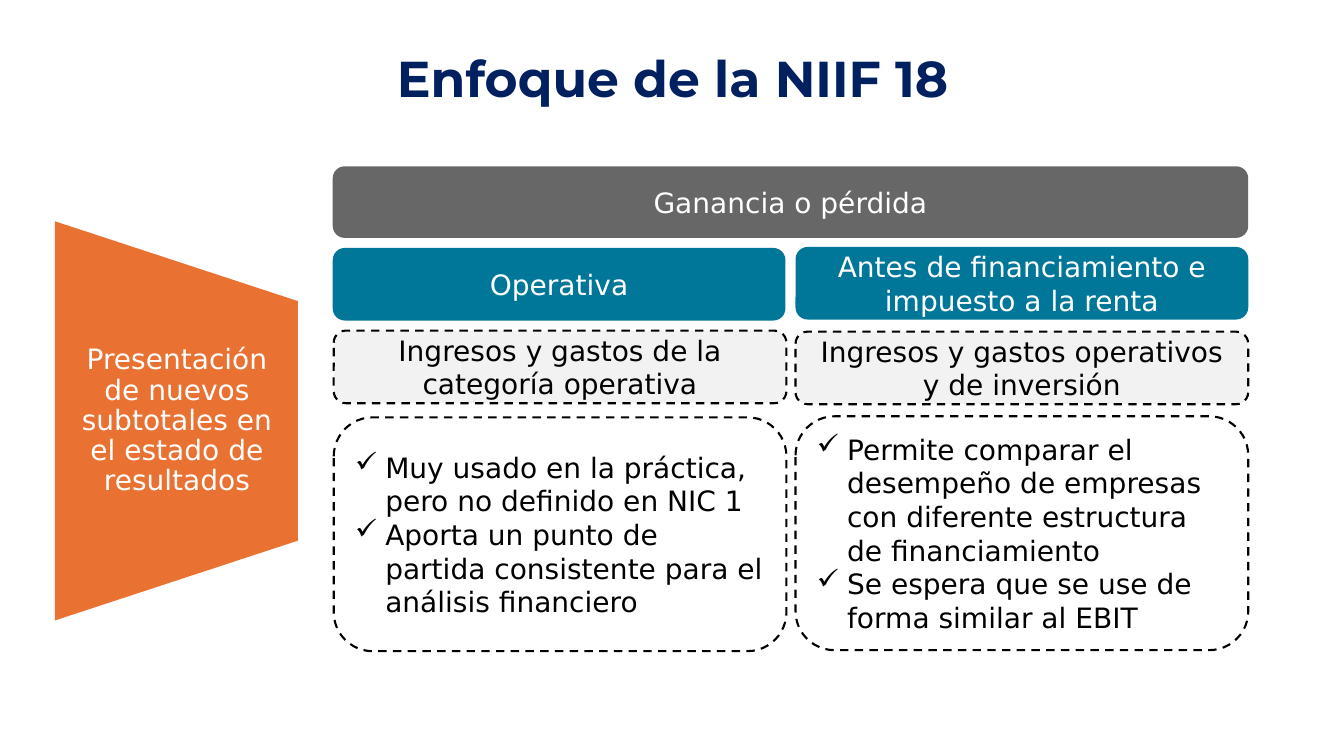
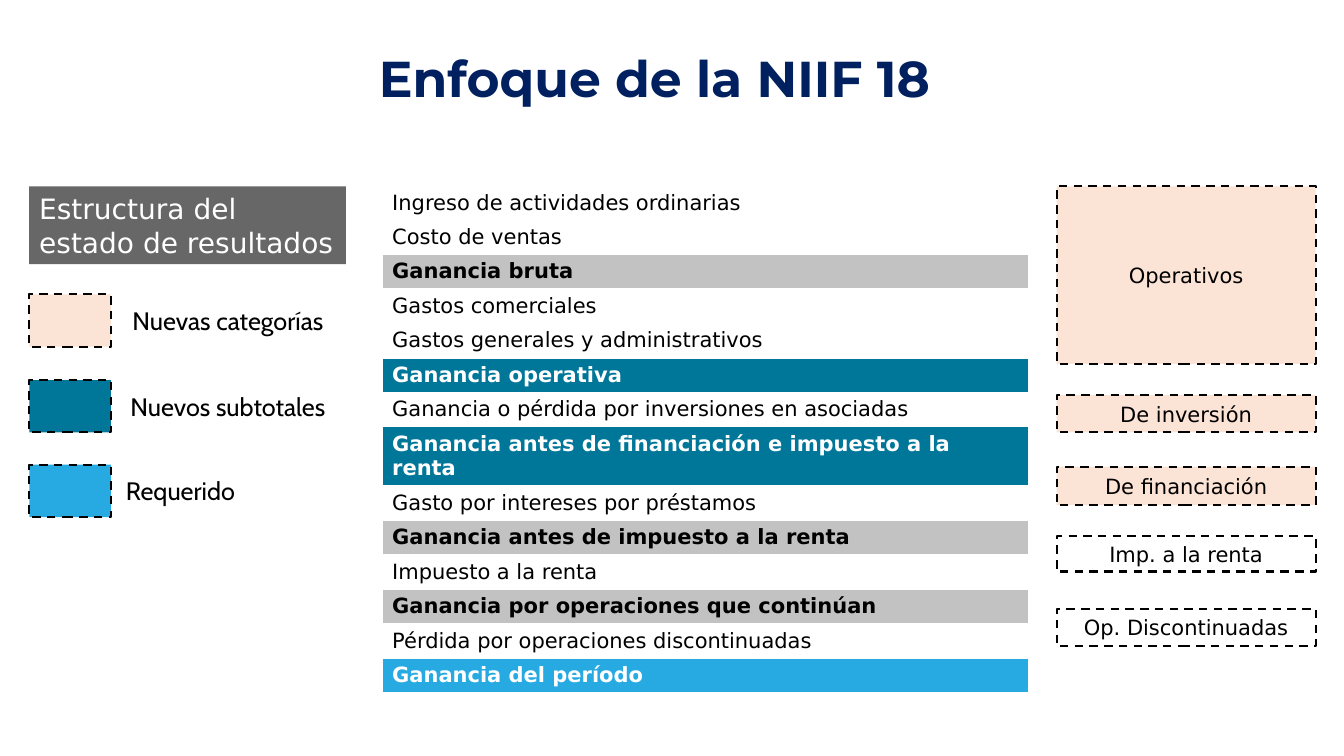
from lxml import etree
from pptx import Presentation
from pptx.dml.color import RGBColor
from pptx.enum import dml, shapes, text
from pptx.oxml import ns
from pptx.util import Inches, Pt

color = RGBColor.from_string
NAVY, TEAL, SKY, ORANGE = "002060", "007799", "27AAE2", "E97132"
GRAY, SILVER, PALE, PEACH = "676767", "C2C2C2", "F2F2F2", "FBE3D6"
BLACK, WHITE = "000000", "FFFFFF"
BODY_FONT, LEGEND_FONT, TITLE_FONT = "DejaVu Sans", "Cabin", "Montserrat"
RECT, ROUND = shapes.MSO_SHAPE.RECTANGLE, shapes.MSO_SHAPE.ROUNDED_RECTANGLE
LEFT, CENTER = text.PP_ALIGN.LEFT, text.PP_ALIGN.CENTER
MIDDLE = text.MSO_ANCHOR.MIDDLE


def write(frame, lines, size, ink=BLACK, font=BODY_FONT, align=CENTER,
          bold=False, spacing=None, check=False):
    """Fill a text frame, one paragraph per line, with check marks if asked."""
    frame.word_wrap = True
    for number, line in enumerate(lines):
        paragraph = frame.add_paragraph() if number else frame.paragraphs[0]
        paragraph.alignment = align
        if spacing:
            paragraph.line_spacing = spacing
        if check:
            properties = paragraph._p.get_or_add_pPr()
            properties.set("marL", str(Inches(0.3)))
            properties.set("indent", str(Inches(-0.3)))
            etree.SubElement(properties, ns.qn("a:buChar")).set("char", "✓")
        run = paragraph.add_run()
        run.text = line
        run.font.name, run.font.size, run.font.bold = font, Pt(size), bold
        run.font.color.rgb = color(ink)


def add_box(slide, place, fill=None, kind=RECT, dashed=False):
    box = slide.shapes.add_shape(kind, *map(Inches, place))
    box.shadow.inherit = False
    if fill:
        box.fill.solid()
        box.fill.fore_color.rgb = color(fill)
    else:
        box.fill.background()
    if dashed:
        box.line.color.rgb = color(BLACK)
        box.line.width = Pt(1.5)
        box.line.dash_style = dml.MSO_LINE.DASH
    else:
        box.line.fill.background()
    box.text_frame.vertical_anchor = MIDDLE
    return box


deck = Presentation()
deck.slide_width, deck.slide_height = Inches(13.33), Inches(7.5)

# Both slides carry the same title
slides = []
for title_left in (0.53, 0.35):
    slide = deck.slides.add_slide(deck.slide_layouts[5])
    title = slide.shapes.title
    title.left, title.top = Inches(title_left), Inches(0.08)
    title.width, title.height = Inches(12.28), Inches(1.45)
    title.text_frame.auto_size = text.MSO_AUTO_SIZE.NONE
    title.text_frame.vertical_anchor = MIDDLE
    write(title.text_frame, ["Enfoque de la NIIF 18"], 36, NAVY, TITLE_FONT,
          bold=True, spacing=0.9)
    slides.append(slide)
subtotals, statement = slides

# Slide 1: new subtotals
funnel = add_box(subtotals, (-0.23, 2.97, 3.96, 2.41), ORANGE,
                 shapes.MSO_SHAPE.FLOWCHART_MANUAL_OPERATION)
funnel.rotation = 270
topic = subtotals.shapes.add_textbox(*map(Inches, (0.55, 2.99, 2.41, 2.38))).text_frame
topic.vertical_anchor = MIDDLE
topic.margin_left = topic.margin_right = Inches(0.14)
topic.margin_top = topic.margin_bottom = 0
write(topic, ["Presentación de nuevos subtotales en el estado de resultados"],
      20, WHITE, spacing=0.9)

result = add_box(subtotals, (3.3, 1.65, 9.08, 0.71), GRAY, ROUND)
write(result.text_frame, ["Ganancia o pérdida"], 20, WHITE)

COLUMN_WIDTH = 4.49
columns = [
    (3.3, 3.31, (2.46, 3.28, 4.14), "Operativa",
     "Ingresos y gastos de la categoría operativa",
     ["Muy usado en la práctica, pero no definido en NIC 1",
      "Aporta un punto de partida consistente para el análisis financiero"]),
    (7.89, 7.89, (2.45, 3.29, 4.13), "Antes de financiamiento e impuesto a la renta",
     "Ingresos y gastos operativos y de inversión",
     ["Permite comparar el desempeño de empresas con diferente estructura de financiamiento",
      "Se espera que se use de forma similar al EBIT"]),
]
for head_left, left, tops, subtotal, content, reasons in columns:
    head_top, content_top, reasons_top = tops
    head = add_box(subtotals, (head_left, head_top, COLUMN_WIDTH, 0.72), TEAL, ROUND)
    write(head.text_frame, [subtotal], 20, WHITE)
    scope = add_box(subtotals, (left, content_top, COLUMN_WIDTH, 0.72), PALE, ROUND, True)
    write(scope.text_frame, [content], 20)
    benefits = add_box(subtotals, (left, reasons_top, COLUMN_WIDTH, 2.32), None, ROUND, True)
    write(benefits.text_frame, reasons, 20, align=LEFT, check=True)

# Slide 2: structure of the income statement
entries = [
    ("Ingreso de actividades ordinarias", None),
    ("Costo de ventas", None),
    ("Ganancia bruta", SILVER),
    ("Gastos comerciales", None),
    ("Gastos generales y administrativos", None),
    ("Ganancia operativa", TEAL),
    ("Ganancia o pérdida por inversiones en asociadas", None),
    ("Ganancia antes de financiación e impuesto a la renta", TEAL),
    ("Gasto por intereses por préstamos", None),
    ("Ganancia antes de impuesto a la renta", SILVER),
    ("Impuesto a la renta", None),
    ("Ganancia por operaciones que continúan", SILVER),
    ("Pérdida por operaciones discontinuadas", None),
    ("Ganancia del período", SKY),
]
ROW_HEIGHT = 0.32
income = statement.shapes.add_table(
    len(entries), 1, Inches(3.79), Inches(1.84), Inches(6.41),
    Inches(ROW_HEIGHT * len(entries))).table
income.first_row = income.horz_banding = False
for row, (entry, fill) in enumerate(entries):
    income.rows[row].height = Inches(ROW_HEIGHT)
    cell = income.cell(row, 0)
    for side in ("lnL", "lnR", "lnT", "lnB"):
        border = etree.SubElement(cell._tc.get_or_add_tcPr(), ns.qn(f"a:{side}"), w=str(Pt(1)))
        solid = etree.SubElement(border, ns.qn("a:solidFill"))
        etree.SubElement(solid, ns.qn("a:srgbClr"), val=WHITE)
    if fill:
        cell.fill.solid()
        cell.fill.fore_color.rgb = color(fill)
    else:
        cell.fill.background()
    write(cell.text_frame, [entry], 15, WHITE if fill in (TEAL, SKY) else BLACK,
          align=LEFT, bold=bool(fill))

categories = [
    ("Operativos", 1.85, 1.76, PEACH),
    ("De inversión", 3.92, 0.37, PEACH),
    ("De financiación", 4.63, 0.38, PEACH),
    ("Imp. a la renta", 5.32, 0.35, None),
    ("Op. Discontinuadas", 6.04, 0.37, None),
]
for category, top, height, fill in categories:
    category_box = add_box(statement, (10.48, top, 2.57, height), fill, dashed=True)
    write(category_box.text_frame, [category], 15)

heading = add_box(statement, (0.29, 1.85, 3.14, 0.77), GRAY)
heading.text_frame.vertical_anchor = text.MSO_ANCHOR.TOP
write(heading.text_frame, ["Estructura del estado de resultados"], 20, WHITE, align=LEFT)

legend = [
    ("Nuevas categorías", 2.92, PEACH, 1.1, CENTER),
    ("Nuevos subtotales", 3.77, TEAL, 1.1, CENTER),
    ("Requerido", 4.61, SKY, 1.15, LEFT),
]
for meaning, top, fill, label_left, align in legend:
    add_box(statement, (0.29, top, 0.81, 0.52), fill, dashed=True)
    label = statement.shapes.add_textbox(
        Inches(label_left), Inches(top), Inches(2.32), Inches(0.52)).text_frame
    label.vertical_anchor = MIDDLE
    write(label, [meaning], 18, font=LEGEND_FONT, align=align)

deck.save("out.pptx")
